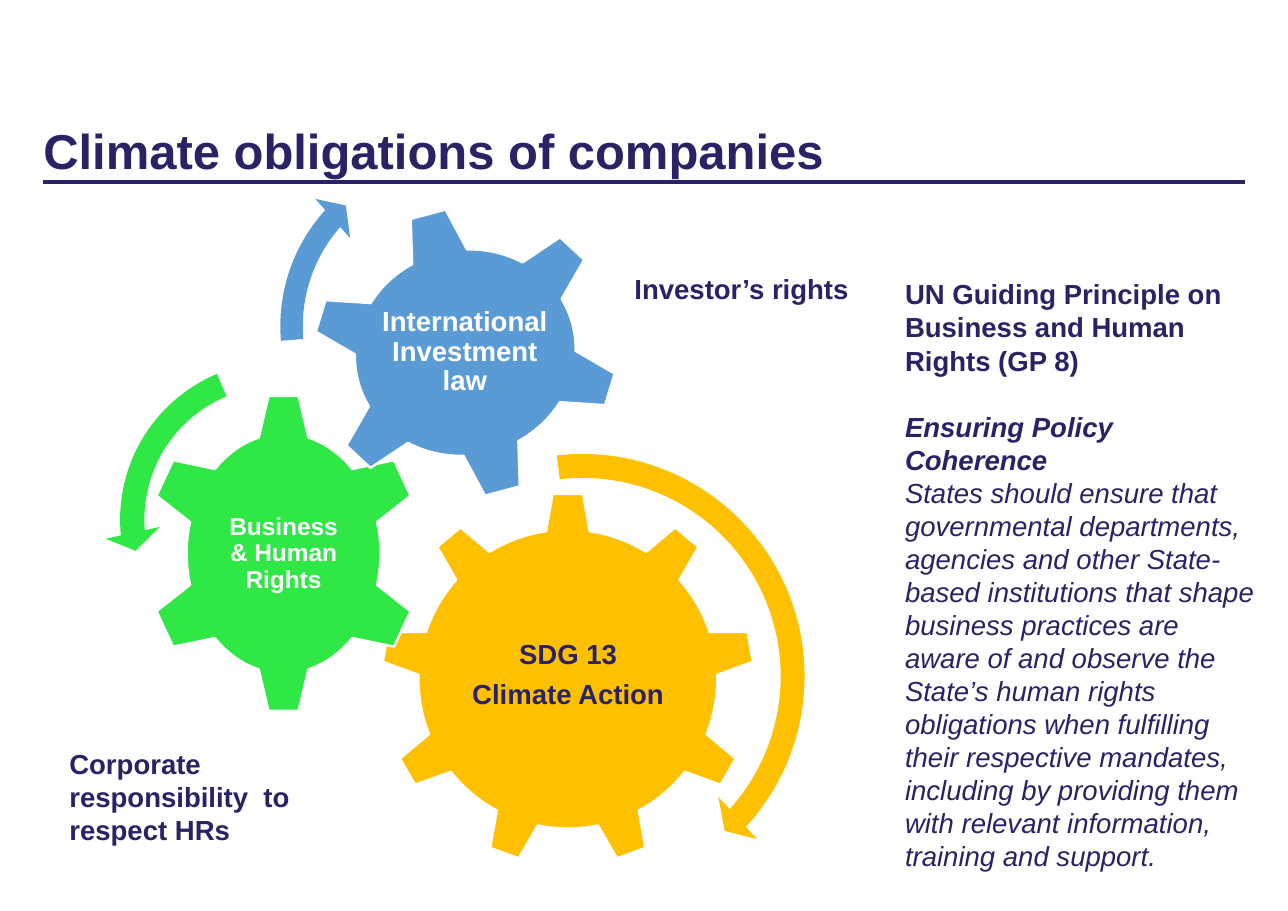
import pptx
import pptx.dml.color
import pptx.enum.shapes
import pptx.enum.text
import pptx.oxml
import pptx.util
from pptx.util import Cm

NAVY, WHITE = "292265", "FFFFFF"
GOLD, GREEN, BLUE = "FFC000", "30E845", "5B9BD5"
SHAPE = pptx.enum.shapes.MSO_SHAPE
ANCHOR = pptx.enum.text.MSO_ANCHOR
CENTER = pptx.enum.text.PP_ALIGN.CENTER


def color(value):
    """Turn a hex string into a colour."""
    return pptx.dml.color.RGBColor.from_string(value)


def place(box, left, top, width, height):
    """Give lengths for a part set in centimetres from the corner of a box."""
    return Cm(box[0] + left), Cm(box[1] + top), Cm(width), Cm(height)


def add_text(page, area, paragraphs, size=18, ink=NAVY, anchor=ANCHOR.TOP,
             align=None, inset=None, spacing=None, after=None):
    """Add a text box; each paragraph is a text and a dict of its own format."""
    box = page.shapes.add_textbox(*area)
    frame = box.text_frame
    frame.word_wrap = True
    frame.vertical_anchor = anchor
    if inset is not None:
        frame.margin_left = frame.margin_right = Cm(inset)
        frame.margin_top = frame.margin_bottom = Cm(inset)
    for index, (text, style) in enumerate(paragraphs):
        para = frame.add_paragraph() if index else frame.paragraphs[0]
        para.alignment = align
        para.line_spacing = spacing
        if after:
            para.space_after = pptx.util.Pt(after)
        if "before" in style:
            para.space_before = pptx.util.Pt(style["before"])
        span = para.add_run()
        span.text = text
        span.font.name = "Arial"
        span.font.size = pptx.util.Pt(size)
        span.font.bold = style.get("bold", True)
        span.font.italic = style.get("italic", False)
        span.font.color.rgb = color(ink)


def add_figure(page, kind, area, fill, outline=None, rotation=0, adjustments=()):
    """Add a filled preset shape."""
    figure = page.shapes.add_shape(kind, *area)
    figure.shadow.inherit = False
    figure.fill.solid()
    figure.fill.fore_color.rgb = color(fill)
    figure.rotation = rotation
    if outline:
        figure.line.color.rgb = color(outline)
        figure.line.width = pptx.util.Pt(1.5)
    else:
        figure.line.fill.background()
    for index, value in enumerate(adjustments):
        figure.adjustments[index] = value


def add_heading(page, box):
    """Add the title and the rule below it."""
    left, top, width, height = box
    add_text(page, place(box, 0, 0, 21.16, 2.49),
             [("Climate obligations of companies", {})],
             size=32, anchor=ANCHOR.BOTTOM, inset=0)
    rule = page.shapes.add_connector(
        pptx.enum.shapes.MSO_CONNECTOR.STRAIGHT,
        Cm(left), Cm(top + height), Cm(left + width), Cm(top + height))
    rule.line.color.rgb = color(NAVY)
    rule.line.width = pptx.util.Pt(2.5)
    rule._element.spPr.append(pptx.oxml.parse_xml(
        '<a:effectLst xmlns:a="http://schemas.openxmlformats.org/drawingml/2006/main"/>'))


def add_gears(page, box):
    """Add the three gears with their captions, turning arrows and labels."""
    gears = [
        (SHAPE.GEAR_9, (6.38, 8.15, 8.61, 8.61), GOLD, 0,
         (8.11, 10.16, 5.16, 4.42), ["SDG 13", "Climate Action"], 18, NAVY),
        (SHAPE.GEAR_6, (0.94, 5.84, 6.38, 7.44), GREEN, 0,
         (2.54, 7.62, 3.18, 3.89), ["Business & Human Rights"], 16, WHITE),
        (SHAPE.GEAR_6, (4.75, 1.55, 7.14, 6.76), BLUE, 345,
         (6.33, 3, 3.96, 3.84), ["International Investment law"], 18, WHITE),
    ]
    for kind, area, fill, rotation, caption_area, lines, size, ink in gears:
        add_figure(page, kind, place(box, *area), fill, WHITE, rotation)
        add_text(page, place(box, *caption_area), [(line, {}) for line in lines],
                 size=size, ink=ink, anchor=ANCHOR.MIDDLE, align=CENTER,
                 inset=0.06, spacing=0.9, after=7)
    arrows = [
        (SHAPE.CIRCULAR_ARROW, (5.51, 6.88), 11.02, GOLD,
         (0.05, 2.99, 25.42, 158.06, 0.06)),
        (SHAPE.LEFT_CIRCULAR_ARROW, (0, 4.78), 8, GREEN,
         (0.07, 4.3, 104.89, 148.38, 0.08)),
        (SHAPE.CIRCULAR_ARROW, (3.71, 0), 8.64, BLUE,
         (0.06, 3.94, 133.14, 105.08, 0.07)),
    ]
    for kind, corner, side, fill, adjustments in arrows:
        add_figure(page, kind, place(box, *corner, side, side), fill,
                   adjustments=adjustments)
    add_text(page, place(box, 11.97, 2.95, 5.59, 1.02), [("Investor’s rights", {})])
    add_text(page, place(box, -1.06, 13.89, 5.66, 2.67),
             [("Corporate responsibility  to respect HRs", {})])


def add_principle(page, box):
    """Add the column that quotes the guiding principle."""
    add_text(page, place(box, 0, 0, *box[2:]), [
        ("UN Guiding Principle on Business and Human Rights (GP 8)", {}),
        ("Ensuring Policy Coherence", {"italic": True, "before": 21.6}),
        ("States should ensure that governmental departments, agencies and other "
         "State-based institutions that shape business practices are aware of and "
         "observe the State’s human rights obligations when fulfilling their "
         "respective mandates, including by providing them with relevant "
         "information, training and support.", {"italic": True, "bold": False}),
    ])


def main():
    """Build the deck and save it."""
    deck = pptx.Presentation()
    deck.slide_width, deck.slide_height = Cm(29.7), Cm(21)
    page = deck.slides.add_slide(deck.slide_layouts[6])
    add_heading(page, (1, 1.65, 27.7, 2.54))
    add_gears(page, (2.41, 3.2, 17.56, 17.9))
    add_principle(page, (20.62, 6.27, 8.59, 14.1))
    deck.save("out.pptx")


if __name__ == "__main__":
    main()
